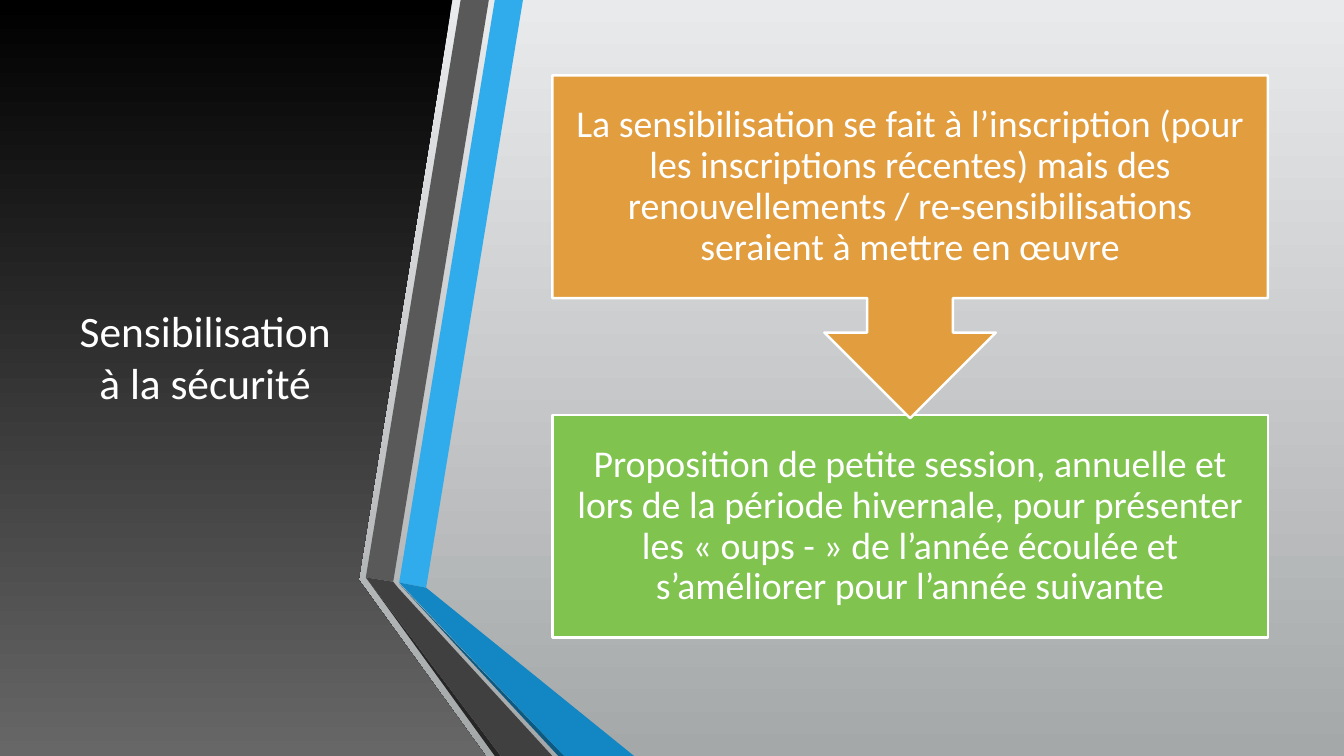
from dataclasses import dataclass

from pptx import Presentation
from pptx.dml.color import RGBColor
from pptx.enum.shapes import MSO_SHAPE
from pptx.enum.text import MSO_ANCHOR, MSO_AUTO_SIZE, PP_ALIGN
from pptx.util import Cm, Pt


@dataclass(frozen=True)
class Theme:
    font: str = "Calibri"
    title: int = 31
    body: int = 27
    white: str = "FFFFFF"
    page: tuple = ("E9EAEB", "A5A8A9")
    panel: tuple = ("000000", "676767")
    blue: str = "30ACEC"
    blue_low: str = "1287C3"
    blue_fold: str = "0C5A82"
    gray: str = "595959"
    gray_low: str = "404040"
    gray_fold: str = "262626"
    orange: str = "E29D3E"
    green: str = "80C34F"


theme = Theme()


def paint(fill, color):
    """Fill with one colour, or from top to bottom with a pair of colours."""
    if isinstance(color, str):
        fill.solid()
        fill.fore_color.rgb = RGBColor.from_string(color)
        return
    fill.gradient()
    fill.gradient_angle = 270
    for stop, tone in zip(fill.gradient_stops, color):
        stop.color.rgb = RGBColor.from_string(tone)


def write(shape, text, size=theme.body, color=theme.white, inset=0.53, spacing=0.9):
    frame = shape.text_frame
    frame.word_wrap = True
    frame.auto_size = MSO_AUTO_SIZE.NONE
    frame.vertical_anchor = MSO_ANCHOR.MIDDLE
    frame.margin_left = frame.margin_right = Cm(inset)
    frame.margin_top = frame.margin_bottom = Cm(inset)
    para = frame.paragraphs[0]
    para.alignment = PP_ALIGN.CENTER
    para.line_spacing = spacing
    run = para.add_run()
    run.text = text
    run.font.name = theme.font
    run.font.size = Pt(size)
    run.font.color.rgb = RGBColor.from_string(color)


deck = Presentation()
deck.slide_width, deck.slide_height = Cm(33.87), Cm(19.05)
slide = deck.slides.add_slide(deck.slide_layouts[5])
paint(slide.background.fill, theme.page)

# Dark panel and folded ribbons, corners in centimetres
base = 19.05
bands = [
    (theme.panel, [(0, 0), (11.4, 0), (9.04, 14.61), (12.24, base), (0, base)]),
    (theme.blue, [(10.06, 14.68), (10.74, 14.81), (13.18, 0), (12.47, 0)]),
    (theme.gray, [(12.32, 0), (11.61, 0), (9.22, 14.55), (9.91, 14.66)]),
    (theme.gray_fold, [(9.22, 14.55), (12.47, base), (12.62, base)]),
    (theme.blue_fold, [(10.06, 14.71), (14.07, base), (14.22, base)]),
    (theme.blue_low, [(10.06, 14.68), (14.22, base), (15.98, base), (10.74, 14.81)]),
    (theme.gray_low, [(13.92, base), (10.03, 14.81), (9.91, 14.66), (9.22, 14.55),
                      (12.62, base)]),
]
for color, corners in bands:
    start, *rest = [(Cm(x), Cm(y)) for x, y in corners]
    pen = slide.shapes.build_freeform(*start)
    pen.add_line_segments(rest)
    band = pen.convert_to_shape()
    band.shadow.inherit = False
    band.line.fill.background()
    paint(band.fill, color)

title = slide.shapes.title
title.left, title.top, title.width, title.height = Cm(1.5), Cm(1.9), Cm(7.34), Cm(14.17)
write(title, "Sensibilisation à la sécurité", size=theme.title, inset=0.25, spacing=1.0)

# The upper step overlaps the lower one with its arrow tip
steps = [
    (MSO_SHAPE.RECTANGLE, 10.46, 5.61, theme.green,
     "Proposition de petite session, annuelle et lors de la période hivernale, "
     "pour présenter les « oups - » de l’année écoulée et s’améliorer "
     "pour l’année suivante"),
    (MSO_SHAPE.DOWN_ARROW_CALLOUT, 1.9, 8.64, theme.orange,
     "La sensibilisation se fait à l’inscription (pour les inscriptions récentes) "
     "mais des renouvellements / re-sensibilisations seraient à mettre en œuvre"),
]
for kind, top, height, color, text in steps:
    step = slide.shapes.add_shape(kind, Cm(13.92), Cm(top), Cm(18.03), Cm(height))
    step.shadow.inherit = False
    paint(step.fill, color)
    paint(step.line.fill, theme.white)
    step.line.width = Pt(1.75)
    write(step, text)

# The title lies above the panel
slide.shapes[-1].element.addprevious(title.element)

deck.save("out.pptx")
